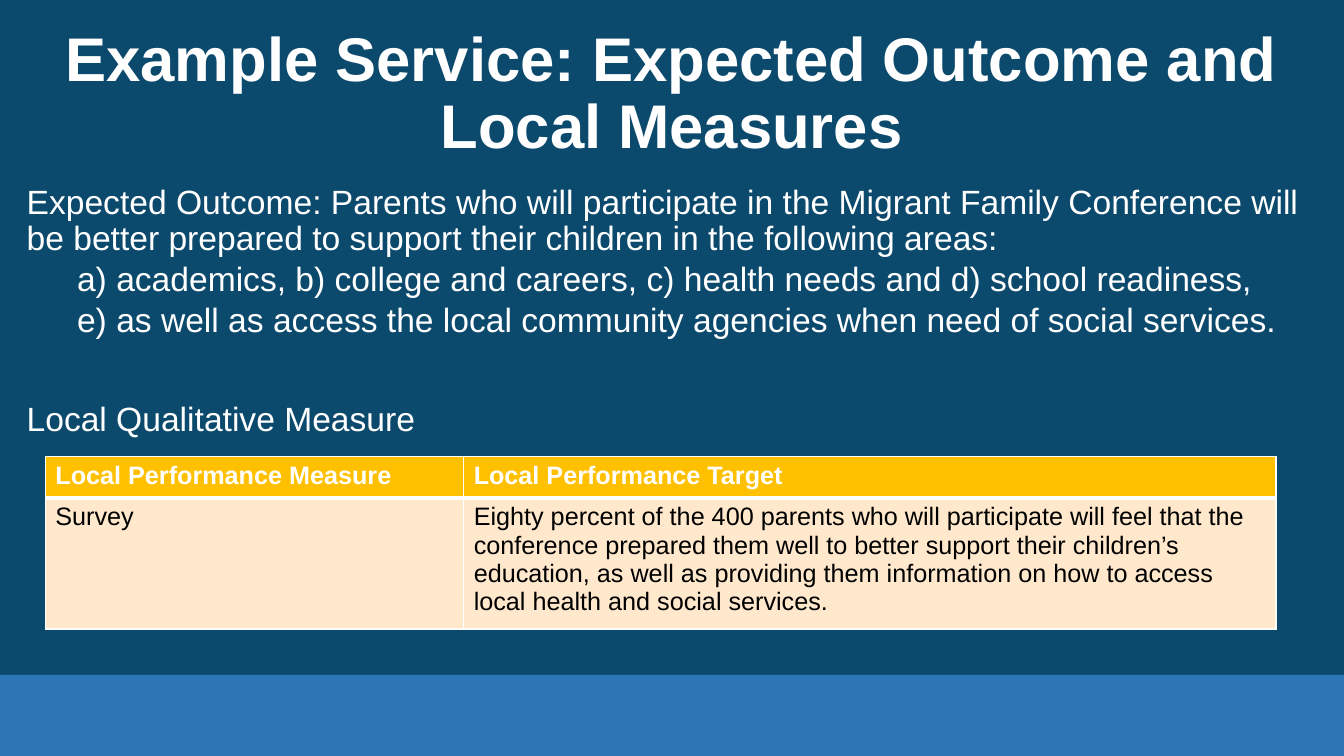
from lxml.etree import SubElement
from pptx import Presentation
from pptx.dml.color import RGBColor as Color
from pptx.enum.shapes import MSO_SHAPE as Shape
from pptx.enum.text import MSO_ANCHOR as Anchor, PP_ALIGN as Align
from pptx.oxml.ns import qn
from pptx.util import Pt

COLORS = {
    "background": "0C4A6D",
    "footer": "2E75B6",
    "header": "FFC000",
    "row": "FFE8CC",
    "white": "FFFFFF",
    "black": "000000",
}
WIDTH, HEIGHT = 960, 540


class SlideBuilder:
    """Draw styled elements on one slide, with lengths in points."""

    def __init__(self, deck, font="Arial"):
        self.font = font
        self.slide = deck.slides.add_slide(deck.slide_layouts[6])
        self.fill(self.slide.background.fill, "background")

    def fill(self, target, color):
        target.solid()
        target.fore_color.rgb = Color.from_string(COLORS[color])

    def bar(self, left, top, width, height, color):
        bar = self.slide.shapes.add_shape(
            Shape.RECTANGLE, Pt(left), Pt(top), Pt(width), Pt(height))
        bar.shadow.inherit = False
        bar.line.fill.background()
        self.fill(bar.fill, color)

    def style_text(self, para, text, size, color="white", bold=False):
        para.text = text
        for span in para.runs:
            span.font.name = self.font
            span.font.size = Pt(size)
            span.font.bold = bold
            span.font.color.rgb = Color.from_string(COLORS[color])

    def text(self, left, top, width, height, lines, size, bold=False,
             align=Align.LEFT, anchor=Anchor.TOP):
        box = self.slide.shapes.add_textbox(Pt(left), Pt(top), Pt(width), Pt(height))
        frame = box.text_frame
        frame.word_wrap = True
        frame.vertical_anchor = anchor
        for index, (text, spacing, before, indent) in enumerate(lines):
            para = frame.add_paragraph() if index else frame.paragraphs[0]
            self.style_text(para, text, size, bold=bold)
            para.alignment = align
            para.line_spacing = spacing
            para.space_before = Pt(before)
            para._p.get_or_add_pPr().set("marL", str(Pt(indent)))

    def borders(self, cell, **widths):
        properties = cell._tc.get_or_add_tcPr()
        for side in "LRTB":
            line = SubElement(properties, qn(f"a:ln{side}"), w=str(Pt(widths.get(side, 1))))
            solid = SubElement(line, qn("a:solidFill"))
            SubElement(solid, qn("a:srgbClr"), val=COLORS["white"])

    def table(self, left, top, columns, heights, rows, size):
        table = self.slide.shapes.add_table(
            len(rows), len(columns), Pt(left), Pt(top),
            Pt(sum(columns)), Pt(sum(heights))).table
        for column, width in zip(table.columns, columns):
            column.width = Pt(width)
        for index, (row, height, texts) in enumerate(zip(table.rows, heights, rows)):
            row.height = Pt(height)
            header = index == 0
            for cell, text in zip(row.cells, texts):
                self.style_text(cell.text_frame.paragraphs[0], text, size,
                                "white" if header else "black", header)
                self.borders(cell, T=3 if index == 1 else 1, B=3 if header else 1)
                self.fill(cell.fill, "header" if header else "row")


def main():
    deck = Presentation()
    deck.slide_width, deck.slide_height = Pt(WIDTH), Pt(HEIGHT)
    page = SlideBuilder(deck)
    page.bar(0, 482, WIDTH, HEIGHT - 482, "footer")
    page.text(12, 16, 936, 104,
              [("Example Service: Expected Outcome and Local Measures", 0.9, 0, 0)],
              44, bold=True, align=Align.CENTER, anchor=Anchor.MIDDLE)
    page.text(12, 129, 936, 395, [
        ("Expected Outcome: Parents who will participate in the Migrant Family Conference "
         "will be better prepared to support their children in the following areas:", 0.9, 10, 0),
        ("a) academics, b) college and careers, c) health needs and d) school readiness,", 1, 0, 36),
        ("e) as well as access the local community agencies when need of social services.", 1, 0, 36),
        ("Local Qualitative Measure", 0.9, 45.7, 0),
    ], 24)
    page.table(32.4, 326.2, [298.8, 580.3], [29.5, 88], [
        ["Local Performance Measure", "Local Performance Target"],
        ["Survey",
         "Eighty percent of the 400 parents who will participate will feel that the "
         "conference prepared them well to better support their children’s education, "
         "as well as providing them information on how to access local health and "
         "social services."],
    ], 18)
    deck.save("out.pptx")


if __name__ == "__main__":
    main()
